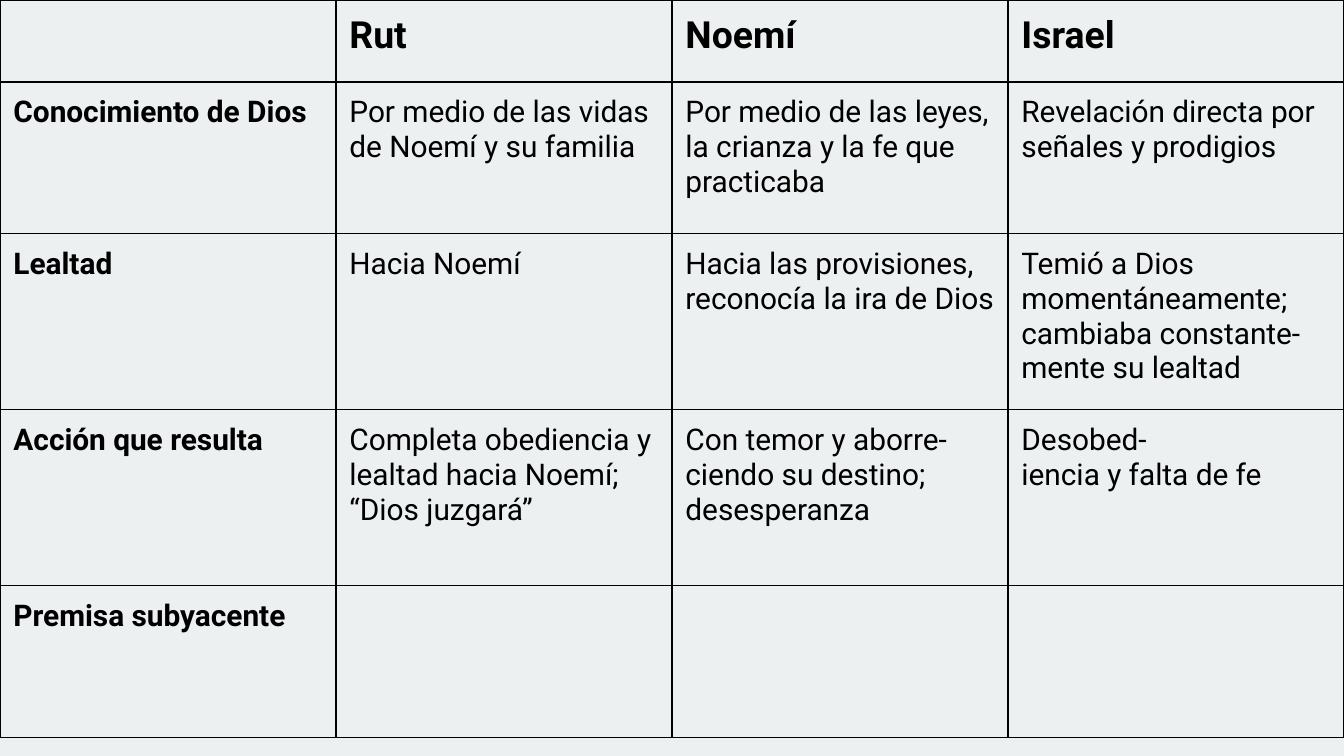
"""Build a comparison table of Rut, Noemí and Israel."""
from lxml.etree import SubElement
from pptx import Presentation
from pptx.dml.color import RGBColor
from pptx.oxml.ns import qn
from pptx.util import Inches, Pt

COLORS = {"background": "ECF0F1", "text": "000000", "border": "000000"}
ROW_HEIGHTS = [0.61, 1.13, 1.31, 1.31, 1.13]
COLUMN_WIDTH = 2.5
ROWS = [
    ["", "Rut", "Noemí", "Israel"],
    ["Conocimiento de Dios",
     "Por medio de las vidas de Noemí y su familia",
     "Por medio de las leyes, la crianza y la fe que practicaba",
     "Revelación directa por señales y prodigios"],
    ["Lealtad",
     "Hacia Noemí",
     "Hacia las provisiones, reconocía la ira de Dios",
     "Temió a Dios momentáneamente; cambiaba constante-mente su lealtad"],
    ["Acción que resulta",
     "Completa obediencia y lealtad hacia Noemí; “Dios juzgará”",
     "Con temor y aborre-ciendo su destino; desesperanza",
     "Desobed-\viencia y falta de fe"],
    ["Premisa subyacente", "", "", ""],
]


def write_text(cell, text, size, bold):
    paragraph = cell.text_frame.paragraphs[0]
    paragraph.text = text
    for run in paragraph.runs:
        run.font.name = "Roboto"
        run.font.size = Pt(size)
        run.font.bold = bold
        run.font.color.rgb = RGBColor.from_string(COLORS["text"])
    for line_break in paragraph._p.findall(qn("a:br")):
        SubElement(line_break, qn("a:rPr"), sz=str(size * 100))


def draw_borders(cell):
    properties = cell._tc.get_or_add_tcPr()
    for side in ("L", "R", "T", "B"):
        line = SubElement(properties, qn(f"a:ln{side}"), w=str(Pt(0.75)))
        fill = SubElement(line, qn("a:solidFill"))
        SubElement(fill, qn("a:srgbClr"), val=COLORS["border"])


presentation = Presentation()
presentation.slide_width = Inches(10)
presentation.slide_height = Inches(10) * 9 // 16
slide = presentation.slides.add_slide(presentation.slide_layouts[6])
slide.background.fill.solid()
slide.background.fill.fore_color.rgb = RGBColor.from_string(COLORS["background"])

column_count = len(ROWS[0])
table = slide.shapes.add_table(
    len(ROWS), column_count, Inches(0), Inches(0),
    Inches(COLUMN_WIDTH * column_count), Inches(sum(ROW_HEIGHTS)),
).table
table.first_row = False
table.horz_banding = False
for column in table.columns:
    column.width = Inches(COLUMN_WIDTH)

for row_index, (height, texts) in enumerate(zip(ROW_HEIGHTS, ROWS)):
    table.rows[row_index].height = Inches(height)
    for column_index, text in enumerate(texts):
        cell = table.cell(row_index, column_index)
        cell.margin_left = cell.margin_right = Inches(0.1)
        cell.margin_top = cell.margin_bottom = Inches(0.1)
        draw_borders(cell)
        cell.fill.background()
        is_header = row_index == 0
        write_text(cell, text, size=20 if is_header else 16,
                   bold=is_header or column_index == 0)

presentation.save("out.pptx")
